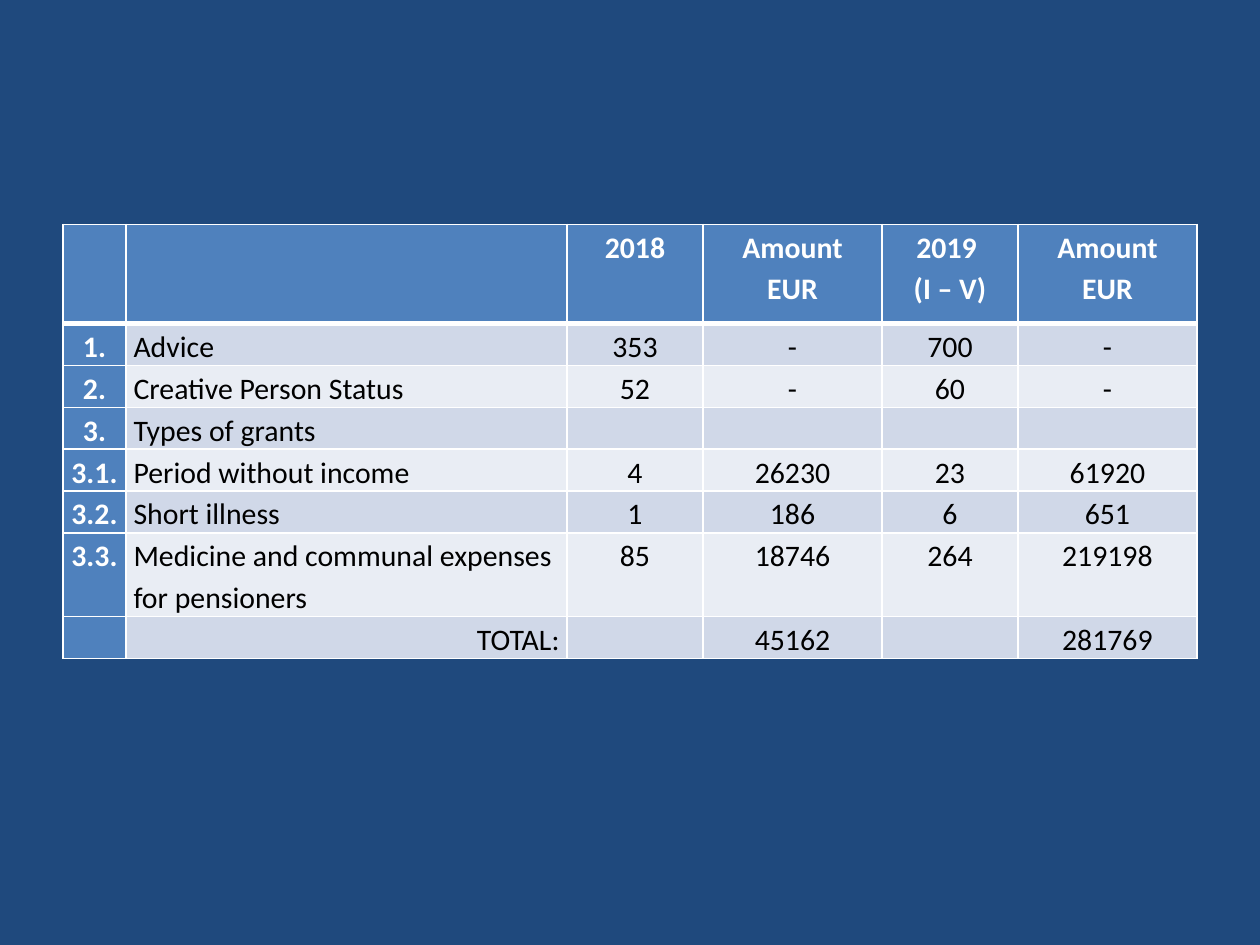
from lxml import etree
from pptx import Presentation
from pptx.dml.color import RGBColor
from pptx.enum.text import PP_ALIGN
from pptx.oxml.ns import qn
from pptx.util import Inches, Pt

LEFT, CENTER, RIGHT = PP_ALIGN.LEFT, PP_ALIGN.CENTER, PP_ALIGN.RIGHT

NAVY = RGBColor(0x1F, 0x49, 0x7D)
BLUE = RGBColor(0x4F, 0x81, 0xBD)
BAND_DARK = RGBColor(0xD0, 0xD8, 0xE8)
BAND_LIGHT = RGBColor(0xE9, 0xED, 0xF4)
WHITE = RGBColor(0xFF, 0xFF, 0xFF)
BLACK = RGBColor(0x00, 0x00, 0x00)

COLUMN_WIDTHS = [0.5, 3.5, 1.08, 1.42, 1.08, 1.42]
ROW_HEIGHTS = [0.79, 0.32, 0.32, 0.32, 0.32, 0.32, 0.65, 0.32]
GRANT_ROWS = [
    ["", "", "2018", "Amount\nEUR", "2019 \n(I – V)", "Amount\nEUR"],
    ["1.", "Advice", "353", "-", "700", "-"],
    ["2.", "Creative Person Status", "52", "-", "60", "-"],
    ["3.", "Types of grants", "", "", "", ""],
    ["3.1.", "Period without income", "4", "26230", "23", "61920"],
    ["3.2.", "Short illness", "1", "186", "6", "651"],
    ["3.3.", "Medicine and communal expenses for pensioners",
     "85", "18746", "264", "219198"],
    ["", "TOTAL:", "", "45162", "", "281769"],
]


def set_borders(cell, widths):
    """Draw white lines of the given widths on the sides of a cell."""
    properties = cell._tc.get_or_add_tcPr()
    for side, width in widths.items():
        line = etree.SubElement(properties, qn(f"a:ln{side}"), w=str(Pt(width)))
        fill = etree.SubElement(line, qn("a:solidFill"))
        etree.SubElement(fill, qn("a:srgbClr"), val=str(WHITE))


def write_cell(cell, text, alignment, color, bold):
    """Write each line of the text as a formatted paragraph."""
    cell.margin_left = cell.margin_right = Inches(0.06)
    cell.margin_top = cell.margin_bottom = 0
    if not text:
        return
    frame = cell.text_frame
    for index, line in enumerate(text.split("\n")):
        paragraph = frame.add_paragraph() if index else frame.paragraphs[0]
        paragraph.alignment = alignment
        paragraph.line_spacing = 1.15
        run = paragraph.add_run()
        run.text = line
        run.font.name = "Calibri"
        run.font.size = Pt(17)
        run.font.bold = bold
        run.font.color.rgb = color


def add_grants_table(slide, left, top, width, height):
    """Place the table of grants in the given box."""
    table = slide.shapes.add_table(
        len(GRANT_ROWS), len(COLUMN_WIDTHS), left, top, width, height).table
    table.first_col = True
    for column, column_width in zip(table.columns, COLUMN_WIDTHS):
        column.width = Inches(column_width)
    for row, row_height in zip(table.rows, ROW_HEIGHTS):
        row.height = Inches(row_height)
    for row_index, texts in enumerate(GRANT_ROWS):
        band = BAND_DARK if row_index % 2 else BAND_LIGHT
        for column_index, text in enumerate(texts):
            cell = table.cell(row_index, column_index)
            is_heading = row_index == 0 or column_index == 0
            alignment = CENTER
            if column_index == 1:
                alignment = RIGHT if text == "TOTAL:" else LEFT
            set_borders(cell, {"L": 1, "R": 1,
                               "T": 3 if row_index == 1 else 1,
                               "B": 3 if row_index == 0 else 1})
            cell.fill.solid()
            cell.fill.fore_color.rgb = BLUE if is_heading else band
            write_cell(cell, text, alignment,
                       WHITE if is_heading else BLACK, is_heading)


def main():
    """Build the grants slide and save it."""
    presentation = Presentation()
    presentation.slide_width = Inches(10)
    presentation.slide_height = Inches(7.5)
    slide = presentation.slides.add_slide(presentation.slide_layouts[6])
    slide.background.fill.solid()
    slide.background.fill.fore_color.rgb = NAVY
    add_grants_table(slide, Inches(0.5), Inches(1.78), Inches(9), Inches(3.39))
    presentation.save("out.pptx")


if __name__ == "__main__":
    main()
